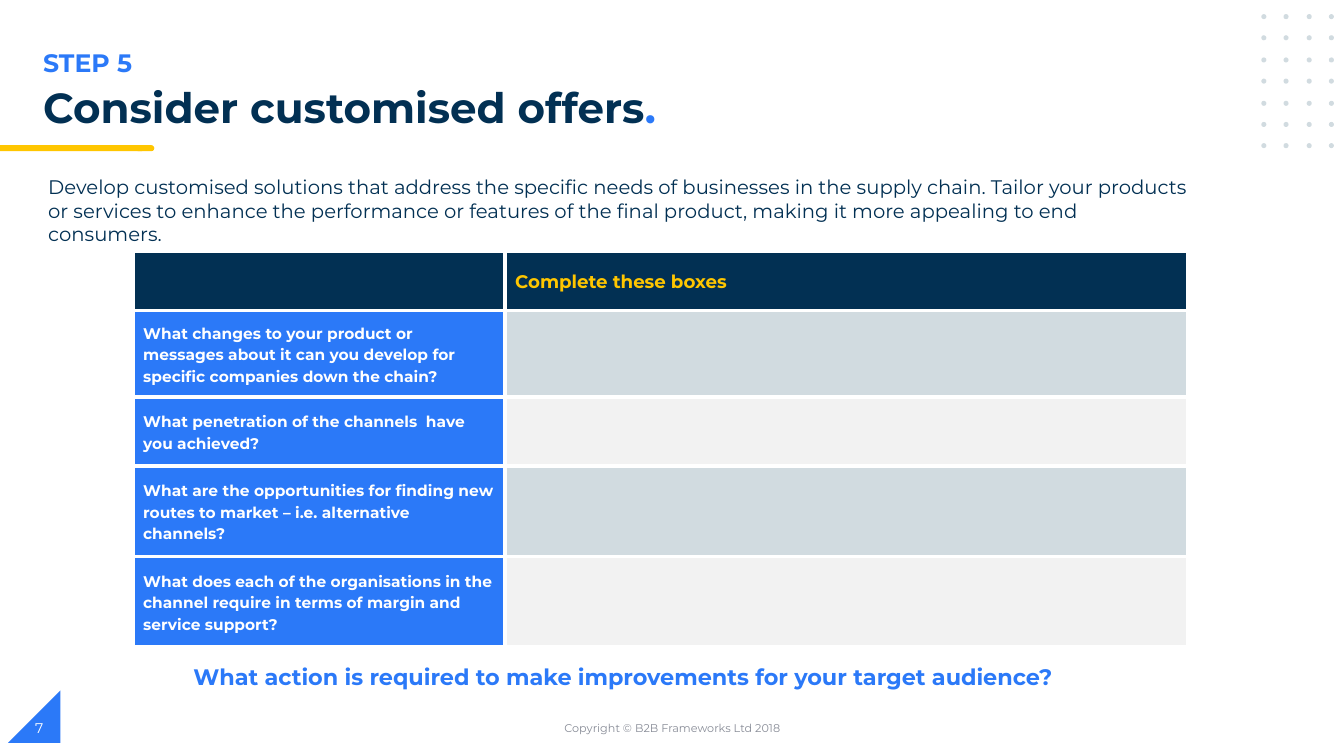
from dataclasses import dataclass
from itertools import product

from lxml.etree import SubElement
from pptx import Presentation
from pptx.dml.color import RGBColor
from pptx.enum.shapes import MSO_SHAPE
from pptx.enum.text import MSO_ANCHOR, PP_ALIGN
from pptx.oxml.ns import qn
from pptx.shapes.autoshape import Shape
from pptx.slide import Slide
from pptx.table import _Cell
from pptx.text.text import _Paragraph
from pptx.util import Inches, Pt

FONT = "Montserrat"
NAVY = RGBColor(0x02, 0x30, 0x53)
BLUE = RGBColor(0x2B, 0x79, 0xF8)
YELLOW = RGBColor(0xFF, 0xC6, 0x00)
PALE_BLUE = RGBColor(0xD1, 0xDB, 0xE0)
PALE_GREY = RGBColor(0xF2, 0xF2, 0xF2)
GREY = RGBColor(0x88, 0x8C, 0x97)
WHITE = RGBColor(0xFF, 0xFF, 0xFF)


@dataclass(frozen=True)
class Box:
    left: float
    top: float
    width: float
    height: float

    def lengths(self) -> tuple[Inches, Inches, Inches, Inches]:
        return Inches(self.left), Inches(self.top), Inches(self.width), Inches(self.height)


@dataclass(frozen=True)
class Run:
    text: str
    size: float
    color: RGBColor
    bold: bool = False


@dataclass(frozen=True)
class Label:
    box: Box
    runs: tuple[Run, ...]
    anchor: MSO_ANCHOR = MSO_ANCHOR.TOP
    align: PP_ALIGN = PP_ALIGN.LEFT
    line_spacing: float = 1.0


@dataclass(frozen=True)
class TableRow:
    height: float
    text: str
    fill: RGBColor


LABELS = (
    Label(Box(0.33, 0.42, 6.69, 0.4), (Run("STEP 5", 18, BLUE, True),)),
    Label(Box(4.42, 7.02, 4.5, 0.4), (Run("Copyright © B2B Frameworks Ltd 2018", 8, GREY),),
          MSO_ANCHOR.MIDDLE, PP_ALIGN.CENTER),
    Label(Box(0.25, 7.02, 3, 0.4), (Run("7", 10, WHITE),), MSO_ANCHOR.MIDDLE),
    Label(Box(0.33, 0.82, 10.35, 0.56),
          (Run("Consider customised offers", 30, NAVY, True), Run(".", 30, BLUE, True)),
          line_spacing=0.9),
    Label(Box(1.82, 6.53, 9.14, 0.37),
          (Run("What action is required to make improvements for your target audience?",
               16, BLUE, True),)),
    Label(Box(0.38, 1.69, 11.57, 0.57),
          (Run("Develop customised solutions that address the specific needs of businesses in "
               "the supply chain. Tailor your products or services to enhance the performance "
               "or features of the final product, making it more appealing to end consumers.",
               14, NAVY),)),
)

HEADER_HEIGHT = 0.59
COLUMN_WIDTHS = (3.69, 6.77)
QUESTIONS = (
    TableRow(0.86, "What changes to your product or messages about it can you develop for "
                   "specific companies down the chain?", PALE_BLUE),
    TableRow(0.68, "What penetration of the channels  have you achieved?", PALE_GREY),
    TableRow(0.9, "What are the opportunities for finding new routes to market – i.e. "
                  "alternative channels?", PALE_BLUE),
    TableRow(0.9, "What does each of the organisations in the channel require in terms of "
                  "margin and service support?", PALE_GREY),
)


def add_run(paragraph: _Paragraph, content: Run) -> None:
    run = paragraph.add_run()
    run.text = content.text
    run.font.color.rgb = content.color
    formats = {"name": FONT, "size": Pt(content.size), "bold": content.bold}
    for name, value in formats.items():
        setattr(run.font, name, value)


def add_label(slide: Slide, label: Label) -> None:
    frame = slide.shapes.add_textbox(*label.box.lengths()).text_frame
    frame.word_wrap = True
    frame.vertical_anchor = label.anchor
    paragraph = frame.paragraphs[0]
    paragraph.alignment = label.align
    paragraph.line_spacing = label.line_spacing
    for run in label.runs:
        add_run(paragraph, run)


def add_plain_shape(slide: Slide, kind: MSO_SHAPE, box: Box, color: RGBColor) -> Shape:
    shape = slide.shapes.add_shape(kind, *box.lengths())
    shape.shadow.inherit = False
    shape.fill.solid()
    shape.fill.fore_color.rgb = color
    shape.line.fill.background()
    return shape


def add_decoration(slide: Slide) -> None:
    corner = add_plain_shape(slide, MSO_SHAPE.RIGHT_TRIANGLE, Box(0.08, 6.85, 0.52, 0.52), BLUE)
    corner._element.spPr.find(qn("a:xfrm")).set("flipH", "1")
    add_plain_shape(slide, MSO_SHAPE.FLOWCHART_TERMINATOR, Box(1.34, 1.44, 0.19, 0.06), YELLOW)
    add_plain_shape(slide, MSO_SHAPE.RECTANGLE, Box(0, 1.44, 1.41, 0.06), YELLOW)
    for row, column in product(range(7), range(4)):
        dot = Box(round(12.51 + column * 0.223, 2), round(0.14 + row * 0.214, 2), 0.05, 0.05)
        add_plain_shape(slide, MSO_SHAPE.OVAL, dot, PALE_BLUE)


def format_cell(cell: _Cell, fill: RGBColor, content: Run | None = None) -> None:
    """Give a cell white borders, a fill and optional text."""
    properties = cell._tc.get_or_add_tcPr()
    for side in ("lnL", "lnR", "lnT", "lnB"):
        line = SubElement(properties, qn(f"a:{side}"), w=str(Pt(3)))
        solid = SubElement(line, qn("a:solidFill"))
        SubElement(solid, qn("a:srgbClr"), val=str(WHITE))
    cell.fill.solid()
    cell.fill.fore_color.rgb = fill
    formats = {
        "vertical_anchor": MSO_ANCHOR.MIDDLE,
        "margin_left": Inches(0.1),
        "margin_right": Inches(0.1),
        "margin_top": 0,
        "margin_bottom": 0,
    }
    for name, value in formats.items():
        setattr(cell, name, value)
    if content:
        paragraph = cell.text_frame.paragraphs[0]
        paragraph.line_spacing = 1.15
        add_run(paragraph, content)


def add_question_table(slide: Slide) -> None:
    heights = [HEADER_HEIGHT] + [question.height for question in QUESTIONS]
    box = Box(1.32, 2.49, sum(COLUMN_WIDTHS), sum(heights))
    table = slide.shapes.add_table(len(heights), len(COLUMN_WIDTHS), *box.lengths()).table
    for column, width in zip(table.columns, COLUMN_WIDTHS):
        column.width = Inches(width)
    for row, height in zip(table.rows, heights):
        row.height = Inches(height)
    format_cell(table.cell(0, 0), NAVY)
    format_cell(table.cell(0, 1), NAVY, Run("Complete these boxes", 13, YELLOW, True))
    for index, question in enumerate(QUESTIONS, start=1):
        format_cell(table.cell(index, 0), BLUE, Run(question.text, 11, WHITE, True))
        format_cell(table.cell(index, 1), question.fill)


def main() -> None:
    presentation = Presentation()
    presentation.slide_width = Inches(13.33)
    presentation.slide_height = Inches(7.5)
    slide = presentation.slides.add_slide(presentation.slide_layouts[6])
    add_decoration(slide)
    add_question_table(slide)
    for label in LABELS:
        add_label(slide, label)
    presentation.save("out.pptx")


if __name__ == "__main__":
    main()
